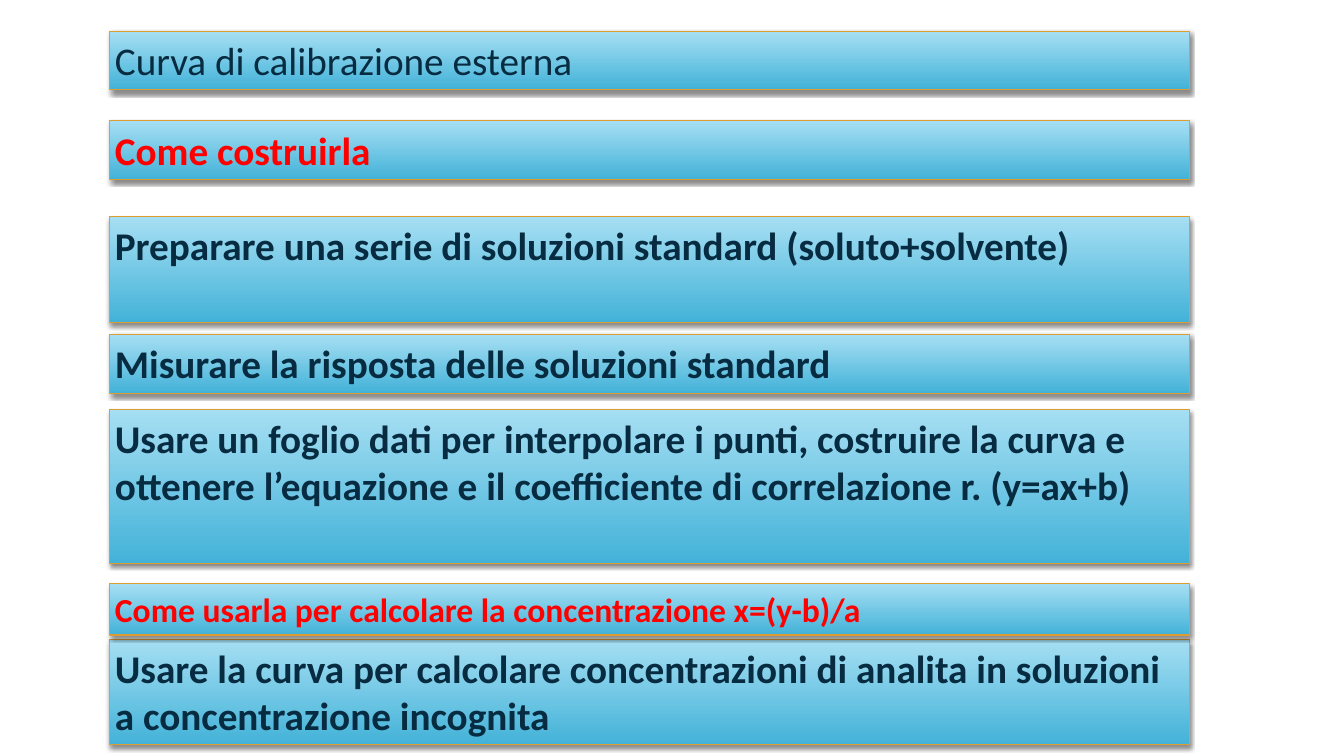
from lxml.etree import SubElement
from pptx import Presentation
from pptx.dml.color import RGBColor
from pptx.enum.shapes import MSO_SHAPE as Shape
from pptx.enum.text import MSO_ANCHOR as Anchor, MSO_AUTO_SIZE as AutoSize, PP_ALIGN as Align
from pptx.oxml.ns import qn
from pptx.util import Inches, Pt

LEFT, WIDTH, INSET = 1.09, 10.71, 0.05
DARK, RED = "072B40", "FF0000"
GRADIENT = ("A6DFF3", "43B2D8")
BORDER = "DD9D31"

# top, height, text, size, colour, bold
BARS = [
    (0.31, 0.58, "Curva di calibrazione esterna", 28, DARK, False),
    (1.2, 0.58, "Come costruirla", 28, RED, True),
    (2.15, 1.05, "Preparare una serie di soluzioni standard (soluto+solvente)", 28, DARK, True),
    (3.32, 0.58, "Misurare la risposta delle soluzioni standard", 28, DARK, True),
    (4.06, 1.53, "Usare un foglio dati per interpolare i punti, costruire la curva e "
     "ottenere l’equazione e il coefficiente di correlazione r. (y=ax+b)", 28, DARK, True),
    (6.34, 1.05, "Usare la curva per calcolare concentrazioni di analita in soluzioni "
     "a concentrazione incognita", 28, DARK, True),
    (5.79, 0.51, "Come usarla per calcolare la concentrazione x=(y-b)/a", 24, RED, True),
]


def colour(value):
    return RGBColor.from_string(value)


def add_shadow(box):
    """Soft shadow straight below the box."""
    box.shadow.inherit = False
    effects = box._element.spPr.find(qn("a:effectLst"))
    shadow = SubElement(effects, qn("a:outerShdw"), blurRad=str(Pt(3)), dist=str(Pt(2)),
                        dir="5400000", algn="ctr", rotWithShape="0")
    black = SubElement(shadow, qn("a:srgbClr"), val="000000")
    SubElement(black, qn("a:alpha"), val="45000")


def style_box(box):
    box.fill.gradient()
    box.fill.gradient_angle = 270
    for stop, position, shade in zip(box.fill.gradient_stops, (0, 1), GRADIENT):
        stop.position = position
        stop.color.rgb = colour(shade)
    box.line.color.rgb = colour(BORDER)
    box.line.width = Pt(0.75)
    add_shadow(box)


def add_bar(page, top, height, text, size, text_colour, bold):
    box = page.shapes.add_shape(Shape.RECTANGLE, Inches(LEFT), Inches(top),
                                Inches(WIDTH), Inches(height))
    style_box(box)

    frame = box.text_frame
    frame.word_wrap = True
    frame.auto_size = AutoSize.NONE
    frame.vertical_anchor = Anchor.TOP
    frame.margin_left = frame.margin_right = Inches(INSET)
    frame.margin_top = frame.margin_bottom = Inches(INSET)

    para = frame.paragraphs[0]
    para.text = text
    para.alignment = Align.LEFT
    para.font.name = "Calibri"
    para.font.size = Pt(size)
    para.font.bold = bold
    para.font.color.rgb = colour(text_colour)


def main():
    deck = Presentation()
    deck.slide_width, deck.slide_height = Inches(13.33), Inches(7.5)
    page = deck.slides.add_slide(deck.slide_layouts[6])
    for bar in BARS:
        add_bar(page, *bar)
    deck.save("out.pptx")


if __name__ == "__main__":
    main()
